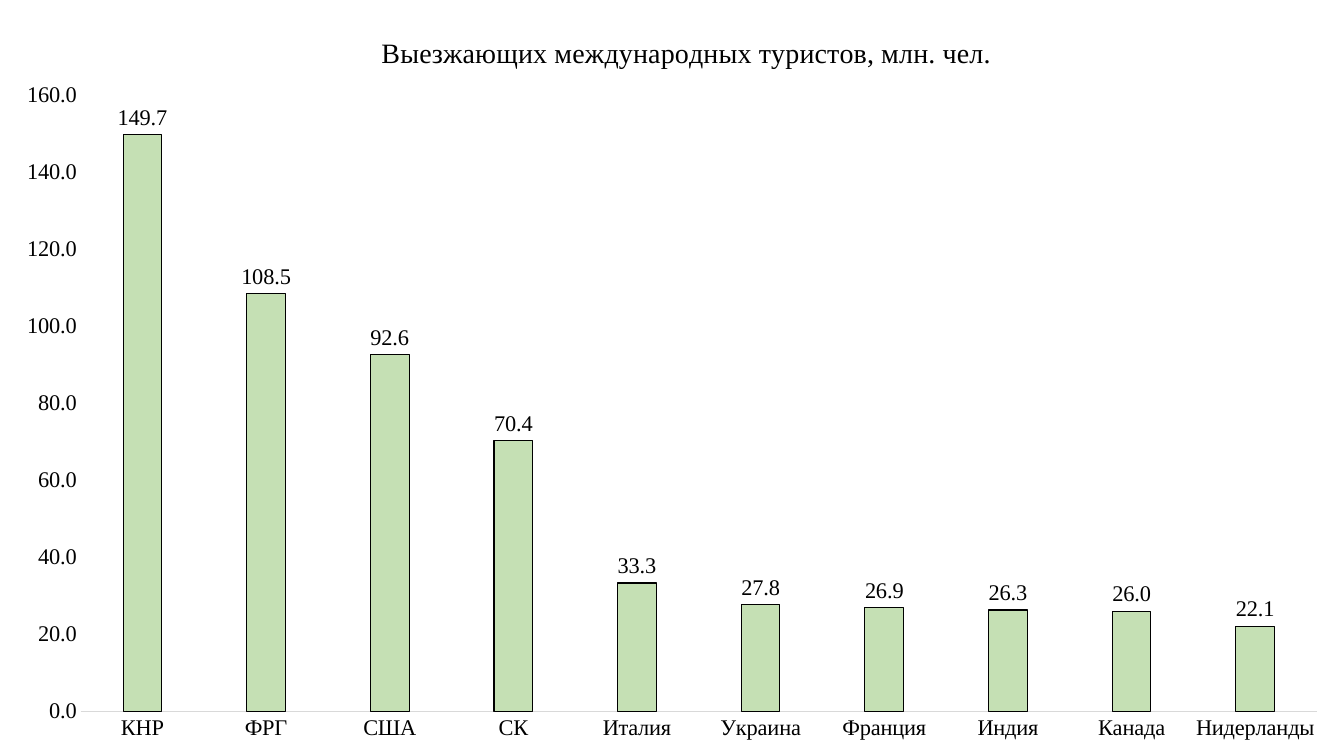
import dataclasses
import typing

import lxml.etree
import pptx
import pptx.chart.data
import pptx.dml.color
import pptx.enum.chart
import pptx.oxml
import pptx.oxml.ns
import pptx.util

BLACK = pptx.dml.color.RGBColor(0x00, 0x00, 0x00)
GREEN = pptx.dml.color.RGBColor(0xC5, 0xE0, 0xB4)
GRAY = pptx.dml.color.RGBColor(0xD9, 0xD9, 0xD9)
FACE = "Times New Roman"
DIGITS = "#,##0.0"


@dataclasses.dataclass
class Land:
    name: str
    trips: float


LANDS = [
    Land("КНР", 149.7),
    Land("ФРГ", 108.5),
    Land("США", 92.6),
    Land("СК", 70.4),
    Land("Италия", 33.3),
    Land("Украина", 27.8),
    Land("Франция", 26.9),
    Land("Индия", 26.3),
    Land("Канада", 26.0),
    Land("Нидерланды", 22.1),
]


def style(font: typing.Any, size: float = 16) -> None:
    font.name = FACE
    font.size = pptx.util.Pt(size)
    font.bold = False
    font.color.rgb = BLACK


def write(frame: typing.Any, text: str, size: float = 16) -> None:
    frame.text = text
    style(frame.paragraphs[0].runs[0].font, size)


def stroke(line: typing.Any, color: pptx.dml.color.RGBColor) -> None:
    line.color.rgb = color
    line.width = pptx.util.Pt(0.75)


def place(host: typing.Any, **spots: typing.Any) -> None:
    tag = pptx.oxml.ns.qn
    old = host.find(tag("c:layout"))
    if old is None:
        old = lxml.etree.Element(tag("c:layout"))
        text = host.find(tag("c:tx"))
        if text is None:
            host.insert(0, old)
        else:
            text.addnext(old)
    for child in list(old):
        old.remove(child)
    manual = lxml.etree.SubElement(old, tag("c:manualLayout"))
    for key, value in spots.items():
        lxml.etree.SubElement(manual, tag(f"c:{key}")).set("val", str(value))


def draw(slide: typing.Any, wide: int, high: int) -> None:
    data = pptx.chart.data.CategoryChartData(number_format=DIGITS)
    data.categories = [land.name for land in LANDS]
    data.add_series("Series 1", [land.trips for land in LANDS])
    kind = pptx.enum.chart.XL_CHART_TYPE.COLUMN_CLUSTERED
    chart = slide.shapes.add_chart(kind, 0, 0, wide, high, data).chart
    style(chart.font)
    chart.has_legend = False

    chart.has_title = True
    title = chart.chart_title
    write(title.text_frame, "Выезжающих международных туристов, млн. чел.", size=20)
    title.include_in_layout = True
    place(title._element, xMode="edge", yMode="edge", x=0.28, y=0.04)
    place(chart.plots[0]._element.getparent(), layoutTarget="inner",
          xMode="edge", yMode="edge", x=0.06, y=0.126, w=0.92, h=0.815)

    none = pptx.enum.chart.XL_TICK_MARK.NONE
    for axis in (chart.category_axis, chart.value_axis):
        axis.major_tick_mark = none
        axis.minor_tick_mark = none
        axis.has_major_gridlines = False
        style(axis.tick_labels.font)
    stroke(chart.category_axis.format.line, GRAY)
    scale = chart.value_axis
    scale.format.line.fill.background()
    scale.minimum_scale, scale.maximum_scale, scale.major_unit = 0, 160, 20
    scale.tick_labels.number_format = DIGITS
    scale.tick_labels.number_format_is_linked = False

    plot = chart.plots[0]
    plot.vary_by_categories = False
    plot.gap_width = 219
    plot.overlap = -27
    bars = plot.series[0]
    bars.format.fill.solid()
    bars.format.fill.fore_color.rgb = GREEN
    stroke(bars.format.line, BLACK)
    labels = bars.data_labels
    labels.show_value = True
    labels.number_format = DIGITS
    labels.number_format_is_linked = False
    labels.position = pptx.enum.chart.XL_LABEL_POSITION.OUTSIDE_END
    style(labels.font)


def main() -> None:
    deck = pptx.Presentation()
    deck.slide_width = pptx.util.Cm(33.87)
    deck.slide_height = pptx.util.Cm(19.05)
    slide = deck.slides.add_slide(deck.slide_layouts[6])
    draw(slide, deck.slide_width, deck.slide_height)
    deck.save("out.pptx")


if __name__ == "__main__":
    main()
